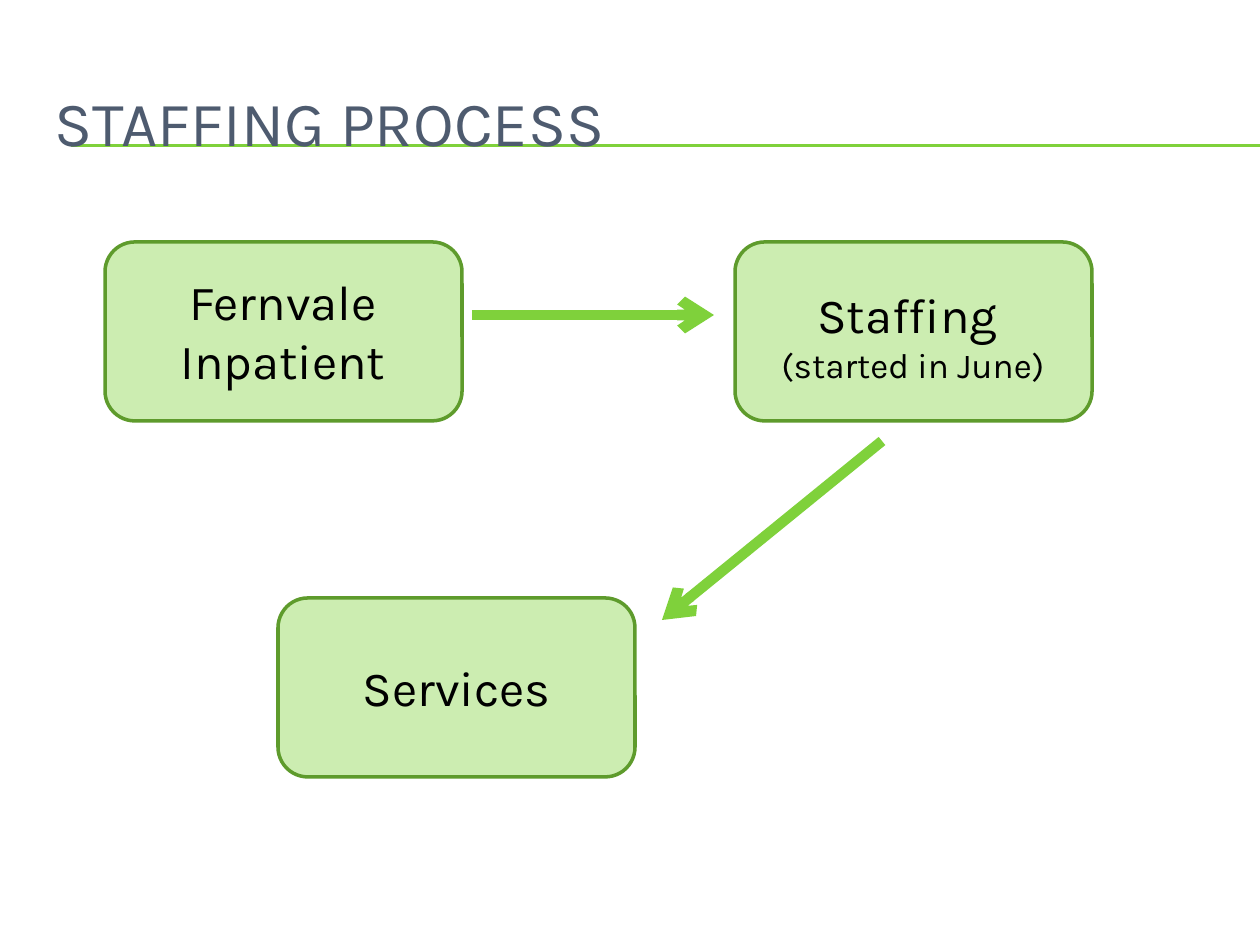
from lxml.etree import SubElement
from pptx import Presentation
from pptx.dml.color import RGBColor
from pptx.enum.shapes import MSO_CONNECTOR as Connector, MSO_SHAPE as Shape
from pptx.enum.text import MSO_ANCHOR as Anchor, MSO_AUTO_SIZE as AutoSize, PP_ALIGN as Align
from pptx.oxml.ns import qn
from pptx.util import Pt

PX = 914400 / 126
GREEN = RGBColor(0x7F, 0xD1, 0x3B)
DARK_GREEN = RGBColor(0x5E, 0x9B, 0x2C)
PALE_GREEN = RGBColor(0xCC, 0xED, 0xB1)
SLATE = RGBColor(0x4E, 0x5B, 0x6F)
BLACK = RGBColor(0, 0, 0)


def px(*lengths):
    return [round(length * PX) for length in lengths]


def add_line(points, width, arrow=False):
    line = slide.shapes.add_connector(Connector.STRAIGHT, *px(*points))
    line.line.color.rgb = GREEN
    line.line.width = Pt(width)
    if arrow:
        SubElement(line.line._get_or_add_ln(), qn("a:tailEnd"), type="arrow")
    SubElement(line._element.spPr, qn("a:effectLst"))


deck = Presentation()
deck.slide_width, deck.slide_height = px(1260, 945)
slide = deck.slides.add_slide(deck.slide_layouts[5])

for y in (145, 146):
    add_line((71, y, 1260, y), 0.75)

title = slide.shapes.title
title.left, title.top, title.width, title.height = px(42, 63, 1197, 116)
title.text_frame.text = "STAFFING PROCESS"
title.text_frame.vertical_anchor = Anchor.MIDDLE
para = title.text_frame.paragraphs[0]
para.alignment = Align.LEFT
para.font.name = "Karla"
para.font.size = Pt(36)
para.font.color.rgb = SLATE
slide.shapes._spTree.append(title._element)

for left, top in ((105, 242), (278, 598), (735, 242)):
    step = slide.shapes.add_shape(Shape.ROUNDED_RECTANGLE, *px(left, top, 357, 179))
    step.shadow.inherit = False
    step.fill.solid()
    step.fill.fore_color.rgb = PALE_GREEN
    step.line.color.rgb = DARK_GREEN
    step.line.width = Pt(2)

for points in ((472, 315, 714, 315), (882, 441, 662, 620)):
    add_line(points, 6, arrow=True)

labels = [
    ((118, 265, 330, 132), [("Fernvale Inpatient", 28)]),
    ((748, 278, 330, 115), [("Staffing ", 28), ("(started in June)", 20)]),
    ((291, 651, 331, 72), [("Services", 28)]),
]
for bounds, lines in labels:
    box = slide.shapes.add_textbox(*px(*bounds))
    frame = box.text_frame
    frame.word_wrap = True
    frame.auto_size = AutoSize.SHAPE_TO_FIT_TEXT
    frame.text = "\n".join(text for text, size in lines)
    for para, (text, size) in zip(frame.paragraphs, lines):
        para.alignment = Align.CENTER
        span = para.runs[0]
        span.font.name = "Karla"
        span.font.size = Pt(size)
        span.font.color.rgb = BLACK

deck.save("out.pptx")
